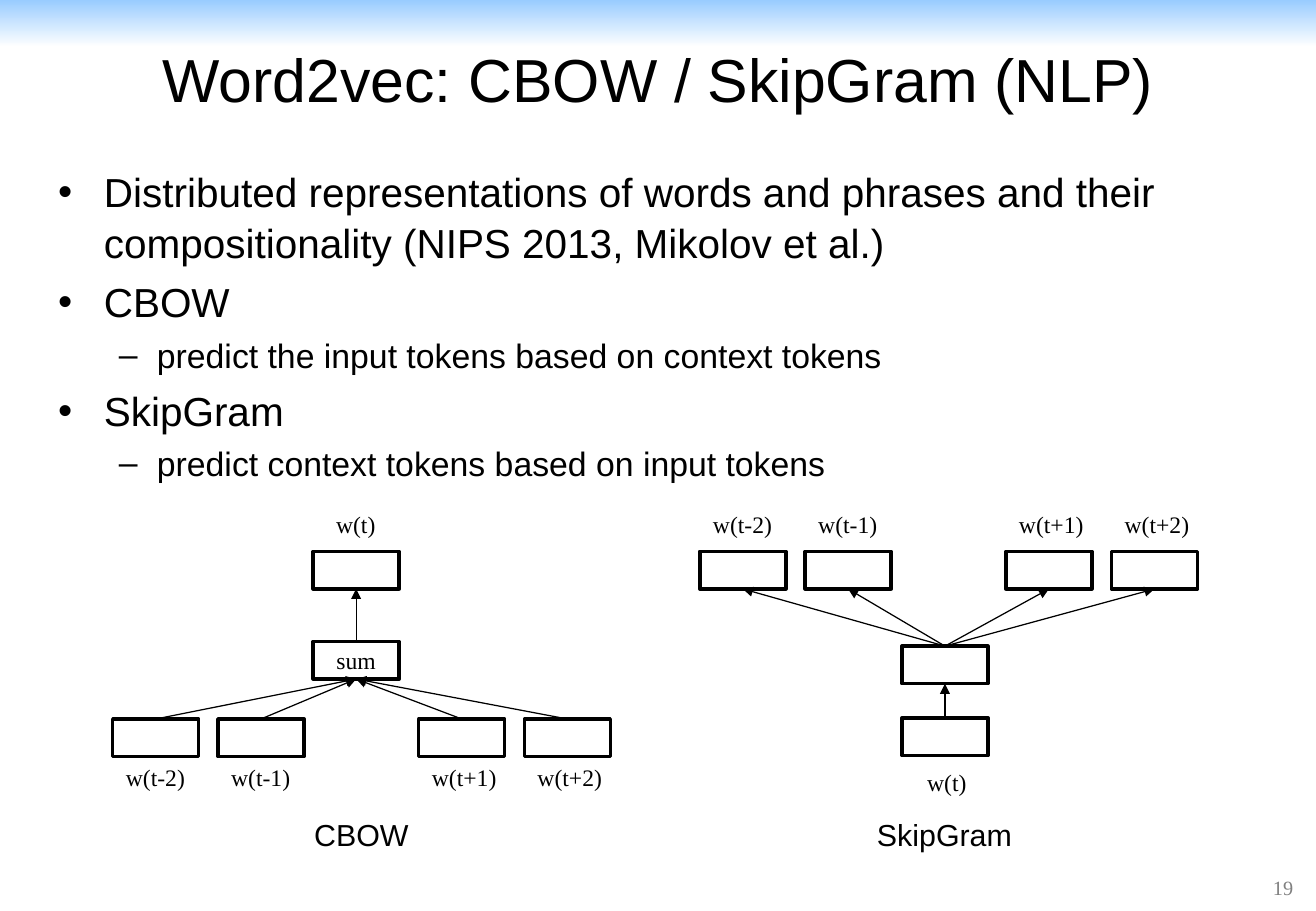
import pptx
import pptx.util
import pptx.dml.color
import pptx.enum.shapes
import pptx.enum.text
import pptx.oxml.ns
import lxml.etree

Pt = pptx.util.Pt
ALIGN = pptx.enum.text.PP_ALIGN
ANCHOR = pptx.enum.text.MSO_ANCHOR
RECTANGLE = pptx.enum.shapes.MSO_SHAPE.RECTANGLE
BLACK = pptx.dml.color.RGBColor(0, 0, 0)
WHITE = pptx.dml.color.RGBColor(255, 255, 255)
SKY = pptx.dml.color.RGBColor(0x99, 0xCC, 0xFF)
GREY = pptx.dml.color.RGBColor(0x80, 0x80, 0x80)
SANS, SERIF = "Arial", "Times New Roman"

UNIT_W, UNIT_H = 51, 22.3
CONTEXT = (("w(t-2)", 0, 49.7), ("w(t-1)", 62.4, 49.7),
           ("w(t+1)", 181.4, 53.3), ("w(t+2)", 244, 53.3))
POINTS = (
    (0, "Distributed representations of words and phrases and their "
        "compositionality (NIPS 2013, Mikolov et al.)"),
    (0, "CBOW"),
    (1, "predict the input tokens based on context tokens"),
    (0, "SkipGram"),
    (1, "predict context tokens based on input tokens"),
)
LEVELS = (("•", 27, -27, 24), ("–", 58.5, -22.5, 20))


def write(paragraph, text, size=14, font=SERIF, color=BLACK, align=ALIGN.LEFT):
    """Put formatted text into a paragraph."""
    paragraph.text = text
    paragraph.alignment = align
    paragraph.font.size = Pt(size)
    paragraph.font.name = font
    paragraph.font.color.rgb = color


def add_frame(slide, left, top, width, height, wrap=False, anchor=ANCHOR.TOP):
    """Add a text box and return its text frame."""
    frame = slide.shapes.add_textbox(Pt(left), Pt(top), Pt(width), Pt(height)).text_frame
    frame.word_wrap = wrap
    frame.vertical_anchor = anchor
    return frame


def add_label(slide, text, left, top, width, height=24.3, **style):
    """Add a one-line label."""
    write(add_frame(slide, left, top, width, height).paragraphs[0], text, **style)


def add_unit(slide, left, top, text=""):
    """Add one network unit."""
    unit = slide.shapes.add_shape(RECTANGLE, Pt(left), Pt(top), Pt(UNIT_W), Pt(UNIT_H))
    unit.shadow.inherit = False
    unit.fill.solid()
    unit.fill.fore_color.rgb = WHITE
    unit.line.color.rgb = BLACK
    unit.line.width = Pt(2)
    if text:
        unit.text_frame.vertical_anchor = ANCHOR.MIDDLE
        write(unit.text_frame.paragraphs[0], text, align=ALIGN.CENTER)


def add_arrow(slide, source, target):
    """Draw an arrow from the top of one unit to the bottom of another."""
    arrow = slide.shapes.add_connector(
        pptx.enum.shapes.MSO_CONNECTOR.STRAIGHT,
        Pt(source[0] + UNIT_W / 2), Pt(source[1]),
        Pt(target[0] + UNIT_W / 2), Pt(target[1] + UNIT_H))
    arrow.line.color.rgb = BLACK
    arrow.line.width = Pt(0.75)
    qn = pptx.oxml.ns.qn
    lxml.etree.SubElement(arrow.line._get_or_add_ln(), qn("a:tailEnd"), type="triangle")
    lxml.etree.SubElement(arrow._element.spPr, qn("a:effectLst"))


def add_header(slide, left, top, width, height):
    """Draw the gradient band and the title below it."""
    band = slide.shapes.add_shape(RECTANGLE, Pt(left), Pt(top), Pt(width), Pt(28))
    band.shadow.inherit = False
    band.line.fill.background()
    band.fill.gradient()
    band.fill.gradient_angle = 270
    for stop, position, color in zip(band.fill.gradient_stops, (0, 1), (SKY, WHITE)):
        stop.position = position
        stop.color.rgb = color
    title = add_frame(slide, left + 21.6, top + 15.1, width - 42.7, height - 15.1,
                      wrap=True, anchor=ANCHOR.MIDDLE)
    write(title.paragraphs[0], "Word2vec: CBOW / SkipGram (NLP)",
          size=36, font=SANS, align=ALIGN.CENTER)


def add_body(slide, left, top, width, height):
    """Write the two-level bullet list."""
    frame = add_frame(slide, left, top, width, height, wrap=True)
    qn = pptx.oxml.ns.qn
    for index, (level, text) in enumerate(POINTS):
        bullet, margin, indent, size = LEVELS[level]
        paragraph = frame.add_paragraph() if index else frame.paragraphs[0]
        properties = paragraph._p.get_or_add_pPr()
        properties.set("marL", str(Pt(margin)))
        properties.set("indent", str(Pt(indent)))
        lxml.etree.SubElement(properties, qn("a:buFont"), typeface=SANS)
        lxml.etree.SubElement(properties, qn("a:buChar"), char=bullet)
        paragraph.level = level
        paragraph.line_spacing = 1.05
        if index:
            paragraph.space_before = Pt(size * 0.2)
        write(paragraph, text, size=size, font=SANS)


def add_cbow(slide, left, top, width, height):
    """Draw the CBOW network, from context words up to the target word."""
    middle = left + (width - UNIT_W) / 2 - 3.2
    output, hidden = (middle, top + 28), (middle, top + 81.4)
    row = top + 127.4
    add_unit(slide, *output)
    add_unit(slide, *hidden, text="sum")
    add_label(slide, "w(t)", middle + 6.5, top, 38.2)
    for text, offset, label_width in CONTEXT:
        add_unit(slide, left + offset, row)
        add_label(slide, text, left + offset + 0.7, row + UNIT_H, label_width)
        add_arrow(slide, (left + offset, row), hidden)
    add_arrow(slide, hidden, output)
    add_label(slide, "CBOW", left + 112.3, top + height - 29, 71.3, 29, size=18, font=SANS)


def add_skipgram(slide, left, top, width, height):
    """Draw the SkipGram network, from the input word up to context words."""
    middle = left + (width - UNIT_W) / 2 - 2.2
    hidden, source = (middle, top + 84.2), (middle, top + 126.7)
    row = top + 28
    add_unit(slide, *hidden)
    add_unit(slide, *source)
    add_label(slide, "w(t)", middle + 7.9, top + 152.6, 38.2)
    for text, offset, label_width in CONTEXT:
        add_unit(slide, left + offset, row)
        add_label(slide, text, left + offset + 0.7, top, label_width)
        add_arrow(slide, hidden, (left + offset, row))
    add_arrow(slide, source, hidden)
    add_label(slide, "SkipGram", left + 97.9, top + height - 29, 95, 29, size=18, font=SANS)


def main():
    """Build and save the slide."""
    deck = pptx.Presentation()
    deck.slide_width, deck.slide_height = Pt(780), Pt(540)
    slide = deck.slides.add_slide(deck.slide_layouts[6])
    add_header(slide, 0, 0, 780, 77.8)
    number = add_frame(slide, 747.4, 508.3, 57, 36, wrap=True, anchor=ANCHOR.MIDDLE)
    write(number.paragraphs[0], "19", size=12, color=GREY)
    add_body(slide, 27.4, 94.3, 719.3, 388)
    add_cbow(slide, 66.8, 298.8, 295, 210.4)
    add_skipgram(slide, 414.8, 298.8, 295, 210.4)
    deck.save("out.pptx")


if __name__ == "__main__":
    main()
